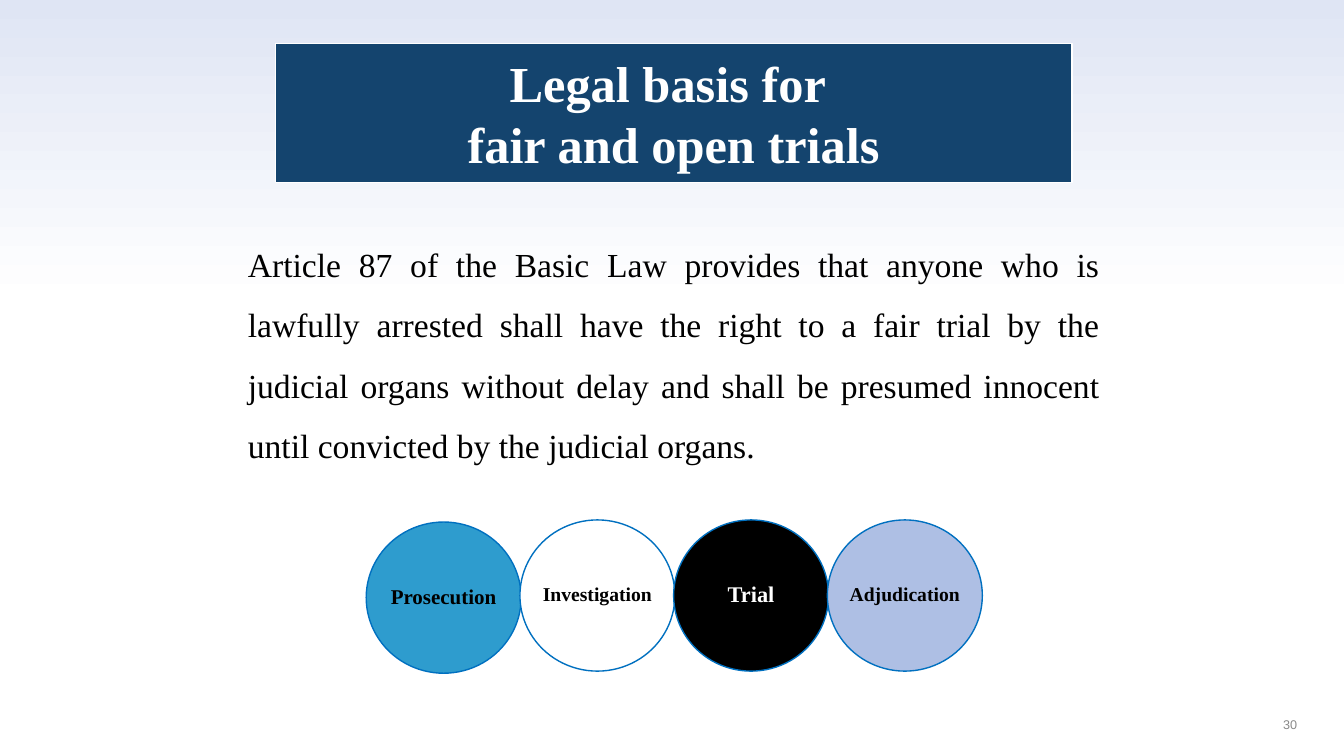
"""Build the slide on the legal basis for fair and open trials."""
from copy import deepcopy

from lxml.etree import SubElement
from pptx import Presentation
from pptx.dml.color import RGBColor
from pptx.enum.shapes import MSO_SHAPE
from pptx.enum.text import MSO_ANCHOR, MSO_AUTO_SIZE, PP_ALIGN
from pptx.oxml.ns import qn
from pptx.util import Inches, Pt

COLORS = {
    "sky": "DFE5F4", "white": "FFFFFF", "black": "000000", "navy": "14446E",
    "outline": "0070C0", "blue": "2E9CCE", "lavender": "AEBFE4", "gray": "898989",
}
COLUMNS, ROWS = 160, 90


class SlideBuilder:
    def __init__(self, presentation, font="Times New Roman"):
        self.font = font
        self.column = presentation.slide_width / COLUMNS
        self.row = presentation.slide_height / ROWS
        self.slide = presentation.slides.add_slide(presentation.slide_layouts[1])

    def box(self, left, top, width, height):
        return (round(left * self.column), round(top * self.row),
                round(width * self.column), round(height * self.row))

    def place(self, shape, box):
        shape.left, shape.top, shape.width, shape.height = self.box(*box)

    def paint(self, shape, fill, line):
        shape.fill.solid()
        shape.fill.fore_color.rgb = RGBColor.from_string(COLORS[fill])
        shape.line.color.rgb = RGBColor.from_string(COLORS[line])
        shape.line.width = Pt(1)

    def set_text(self, shape, text, size, color, align=PP_ALIGN.CENTER, bold=False,
                 anchor=MSO_ANCHOR.MIDDLE, spacing=1.0, font=None, wrap=True):
        frame = shape.text_frame
        frame.text = text
        frame.word_wrap = wrap
        frame.auto_size = MSO_AUTO_SIZE.NONE
        frame.vertical_anchor = anchor
        for paragraph in frame.paragraphs:
            paragraph.alignment = align
            paragraph.line_spacing = spacing
            paragraph.space_before = Pt(0)
            paragraph.font.name = font or self.font
            paragraph.font.size = Pt(size)
            paragraph.font.bold = bold
            paragraph.font.color.rgb = RGBColor.from_string(COLORS[color])

    def background(self, stops):
        fill = self.slide.background.fill
        fill.gradient()
        fill.gradient_angle = 270
        stop_list = self.slide.element.find(".//" + qn("a:gsLst"))
        while len(stop_list) < len(stops):
            stop_list.append(deepcopy(stop_list[-1]))
        for stop, (position, color) in zip(self.slide.background.fill.gradient_stops, stops):
            stop.position = position
            stop.color.rgb = RGBColor.from_string(COLORS[color])

    def banner(self, text, box):
        title = self.slide.shapes.title
        self.place(title, box)
        geometry = SubElement(title.element.spPr, qn("a:prstGeom"), prst="roundRect")
        adjustments = SubElement(geometry, qn("a:avLst"))
        SubElement(adjustments, qn("a:gd"), name="adj", fmla="val 14000")
        self.paint(title, "navy", "white")
        self.set_text(title, text, 36, "white", bold=True)
        frame = title.text_frame
        frame.margin_left = frame.margin_right = Inches(0.2)
        frame.margin_top = frame.margin_bottom = Inches(0.03)

    def body(self, text, box):
        body = self.slide.placeholders[1]
        self.place(body, box)
        self.set_text(body, text, 24, "black", PP_ALIGN.JUSTIFY,
                      anchor=MSO_ANCHOR.TOP, spacing=1.5)
        properties = body.text_frame.paragraphs[0]._p.get_or_add_pPr()
        properties.set("marL", "0")
        properties.set("indent", "0")
        bullet = SubElement(properties, qn("a:buNone"))
        properties.find(qn("a:spcBef")).addnext(bullet)

    def circle(self, text, box, fill, size, color):
        circle = self.slide.shapes.add_shape(MSO_SHAPE.OVAL, *self.box(*box))
        circle.shadow.inherit = False
        self.paint(circle, fill, "outline")
        self.set_text(circle, text, size, color, bold=True, spacing=0.9, wrap=False)

    def page_number(self, text, box):
        number = self.slide.shapes.add_textbox(*self.box(*box))
        self.set_text(number, text, 9, "gray", PP_ALIGN.RIGHT, font="Arial")


def main():
    presentation = Presentation()
    presentation.slide_width, presentation.slide_height = Inches(13.33), Inches(7.5)
    builder = SlideBuilder(presentation)
    builder.background([(0, "sky"), (0.4, "white"), (1, "white")])
    builder.banner("Legal basis for \nfair and open trials", (32.8, 5.2, 94.8, 16.5))
    builder.body(
        "Article 87 of the Basic Law provides that anyone who is lawfully arrested "
        "shall have the right to a fair trial by the judicial organs without delay "
        "and shall be presumed innocent until convicted by the judicial organs.",
        (28.3, 26, 103.8, 29.4))
    builder.page_number("30", (119.6, 83.8, 36, 4.8))
    stages = [
        ("Prosecution", 62.15, "blue", 15, "black"),
        ("Investigation", 61.9, "white", 14, "black"),
        ("Trial", 61.9, "black", 16, "white"),
        ("Adjudication", 61.9, "lavender", 14, "black"),
    ]
    for index, (text, top, fill, size, color) in enumerate(stages):
        builder.circle(text, (43.6 + 18.3 * index, top, 18.45, 18), fill, size, color)
    presentation.save("out.pptx")


if __name__ == "__main__":
    main()
